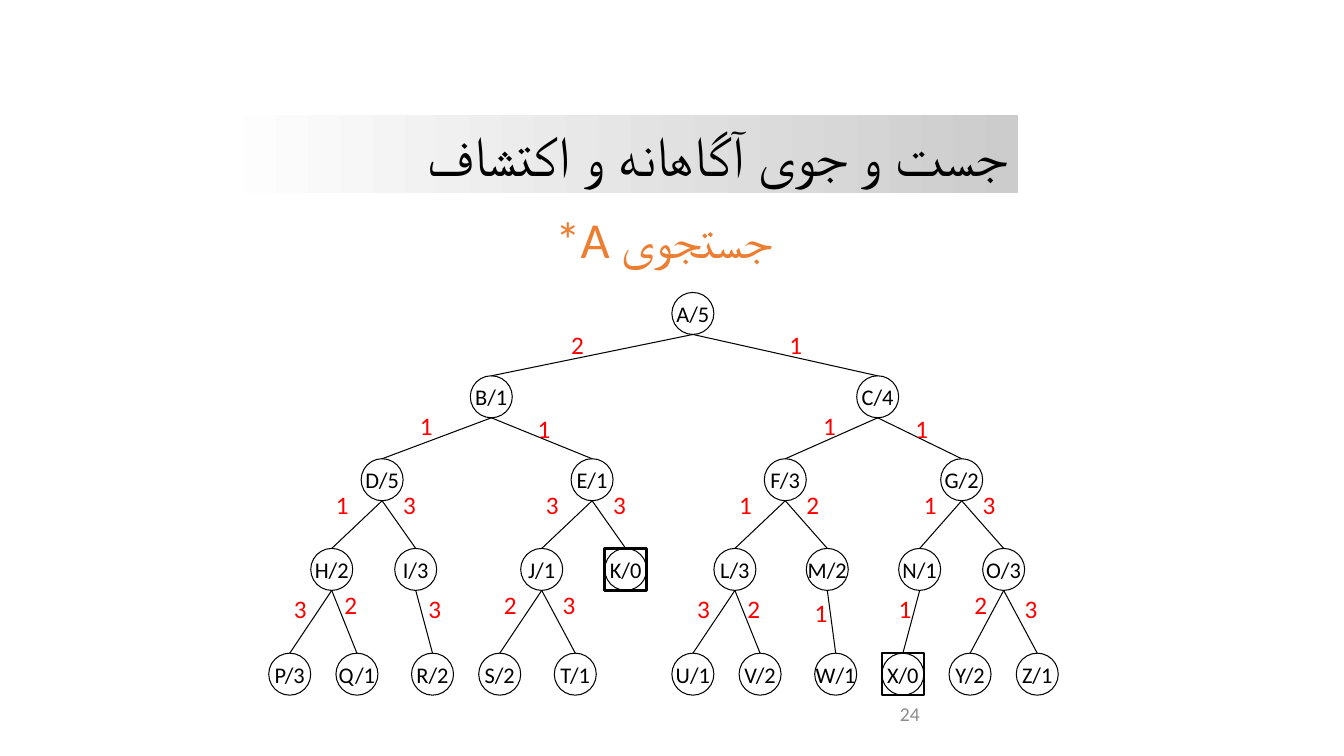
import pptx
import pptx.util
import pptx.dml.color
import pptx.enum.shapes
import pptx.enum.text
import pptx.oxml.ns
import lxml.etree

Cm = pptx.util.Cm
Pt = pptx.util.Pt
Shape = pptx.enum.shapes.MSO_SHAPE
Align = pptx.enum.text.PP_ALIGN
Anchor = pptx.enum.text.MSO_ANCHOR
qn = pptx.oxml.ns.qn

COLORS = {"ink": "000000", "paper": "FFFFFF", "shade": "CCCCCC",
          "cost": "FF0000", "accent": "ED7D31", "page": "8C8C8C"}


def color(name):
    return pptx.dml.color.RGBColor.from_string(COLORS[name])


def write(shape, text, size, ink, align=Align.LEFT, face="Calibri"):
    frame = shape.text_frame
    frame.text = text
    frame.word_wrap = True
    frame.vertical_anchor = Anchor.TOP
    para = frame.paragraphs[0]
    para.alignment = align
    para.font.size = Pt(size)
    para.font.name = face
    para.font.color.rgb = color(ink)
    # Typeface for the Persian letters
    font = para._p.pPr.find(qn("a:defRPr"))
    lxml.etree.SubElement(font, qn("a:cs")).set("typeface", face)
    return frame


deck = pptx.Presentation()
deck.slide_width = Cm(33.87)
deck.slide_height = Cm(19.05)
slide = deck.slides.add_slide(deck.slide_layouts[5])
shapes = slide.shapes

# Title on a fading band
title = shapes.title
title.left, title.top, title.width, title.height = Cm(5.33), Cm(2.9), Cm(20.32), Cm(1.96)
title.fill.gradient()
title.fill.gradient_angle = 0
for stop, name in zip(title.fill.gradient_stops, ("paper", "shade")):
    stop.color.rgb = color(name)
write(title, "جست و جوی آگاهانه و اکتشاف", 40, "ink", Align.RIGHT, "Times New Roman")

# Subtitle
topic = shapes.add_textbox(Cm(5.92), Cm(5.13), Cm(21.62), Cm(1.78))
frame = write(topic, "جستجوی A*", 36, "accent", Align.CENTER)
frame.paragraphs[0]._p.pPr.set("rtl", "1")

# Tree: columns count twelfths of an inch, rows are the tops of the levels
STEP = 2.54 / 12
SIZE = 5 * STEP
ROWS = [7.37, 9.47, 11.56, 13.82, 16.46]
GOALS = "KX"

# Node, column, parent, then the cost of the edge with its column and top
NODES = [
    ("A/5", 80, None, None, 0, 0),
    ("B/1", 56, "A", "2", 68, 8.31),
    ("C/4", 102, "A", "1", 94, 8.31),
    ("D/5", 43, "B", "1", 50, 10.34),
    ("E/1", 68, "B", "1", 64, 10.41),
    ("F/3", 91, "C", "1", 98, 10.34),
    ("G/2", 112, "C", "1", 109, 10.41),
    ("H/2", 37, "D", "1", 40, 12.32),
    ("I/3", 47, "D", "3", 48, 12.32),
    ("J/1", 62, "E", "3", 65, 12.32),
    ("K/0", 72, "E", "3", 73, 12.32),
    ("L/3", 85, "F", "1", 88, 12.32),
    ("M/2", 96, "F", "2", 96, 12.32),
    ("N/1", 107, "G", "1", 110, 12.32),
    ("O/3", 117, "G", "3", 117, 12.32),
    ("P/3", 32, "H", "3", 35, 14.94),
    ("Q/1", 40, "H", "2", 41, 14.86),
    ("R/2", 49, "I", "3", 51, 14.94),
    ("S/2", 57, "J", "2", 60, 14.86),
    ("T/1", 66, "J", "3", 67, 14.86),
    ("U/1", 80, "L", "3", 83, 14.94),
    ("V/2", 88, "L", "2", 89, 14.94),
    ("W/1", 97, "M", "1", 97, 15.06),
    ("X/0", 105, "N", "1", 107, 14.94),
    ("Y/2", 113, "O", "2", 116, 14.86),
    ("Z/1", 121, "O", "3", 122, 14.94),
]

drawn = {}
for text, col, parent, cost, spot, top in NODES:
    level = drawn[parent][1] + 1 if parent else 0
    box = Cm(col * STEP), Cm(ROWS[level]), Cm(SIZE), Cm(SIZE)

    # Node circle
    node = shapes.add_shape(Shape.OVAL, *box)
    node.shadow.inherit = False
    node.fill.solid()
    node.fill.fore_color.rgb = color("paper")
    node.line.color.rgb = color("ink")
    node.line.width = Pt(0.75)
    frame = write(node, text, 16, "ink", Align.CENTER)
    frame.word_wrap = False
    frame.vertical_anchor = Anchor.MIDDLE
    drawn[text[0]] = node, level

    # Square around a goal
    if text[0] in GOALS:
        goal = shapes.add_shape(Shape.RECTANGLE, *box)
        goal.shadow.inherit = False
        goal.fill.background()
        goal.line.color.rgb = color("ink")
        goal.line.width = Pt(1.75)

    # Edge from the parent, with its cost
    if parent:
        base = drawn[parent][0]
        edge = shapes.add_connector(
            pptx.enum.shapes.MSO_CONNECTOR.STRAIGHT,
            base.left + base.width // 2, base.top + base.height,
            node.left + node.width // 2, node.top)
        edge.end_connect(node, 0)
        edge.line.color.rgb = color("ink")
        edge.line.width = Pt(0.75)
        lxml.etree.SubElement(edge._element.spPr, qn("a:effectLst"))

        label = shapes.add_textbox(Cm(spot * STEP), Cm(top), Cm(STEP), Cm(0.76))
        frame = write(label, cost, 18, "cost")
        frame.margin_left = frame.margin_right = 0
        frame.margin_top = frame.margin_bottom = 0
        frame.word_wrap = False

# Page number
page = shapes.add_textbox(Cm(22.43), Cm(17.35), Cm(5.28), Cm(1.27))
write(page, "24", 14, "page").vertical_anchor = Anchor.MIDDLE

deck.save("out.pptx")
